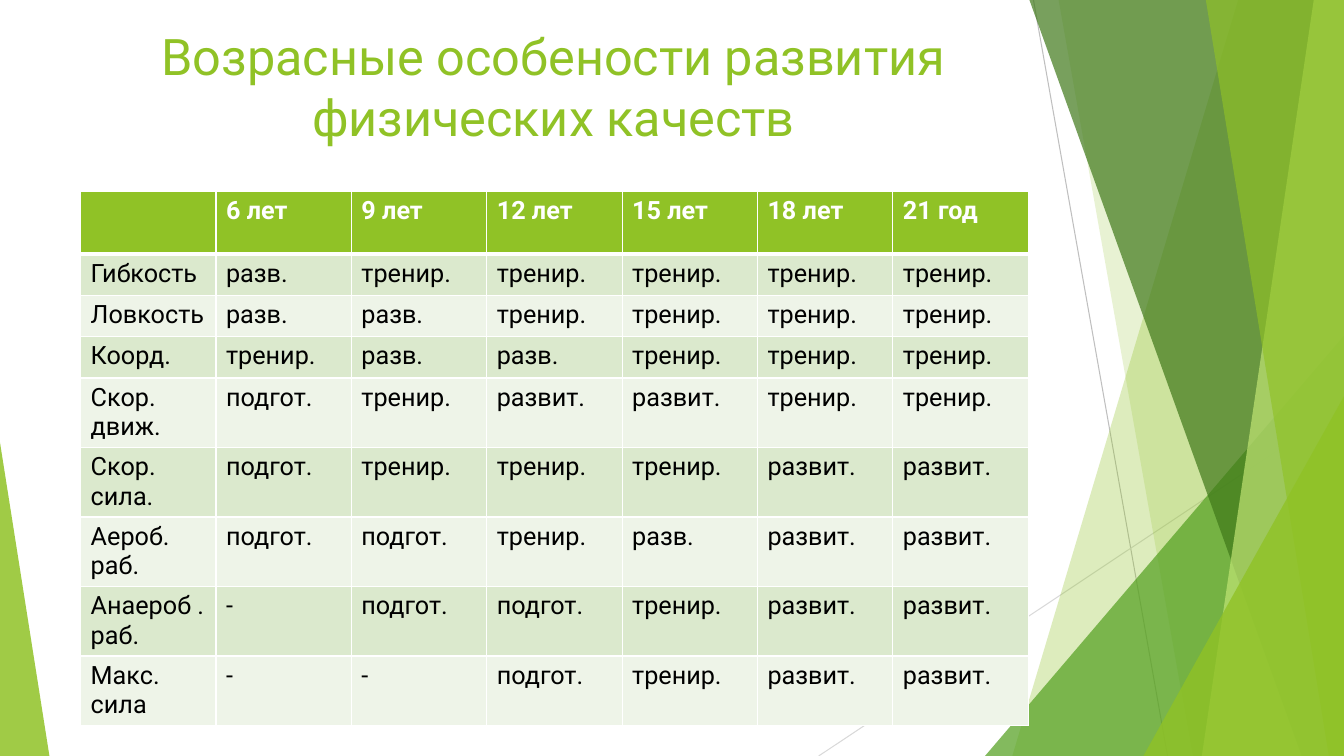
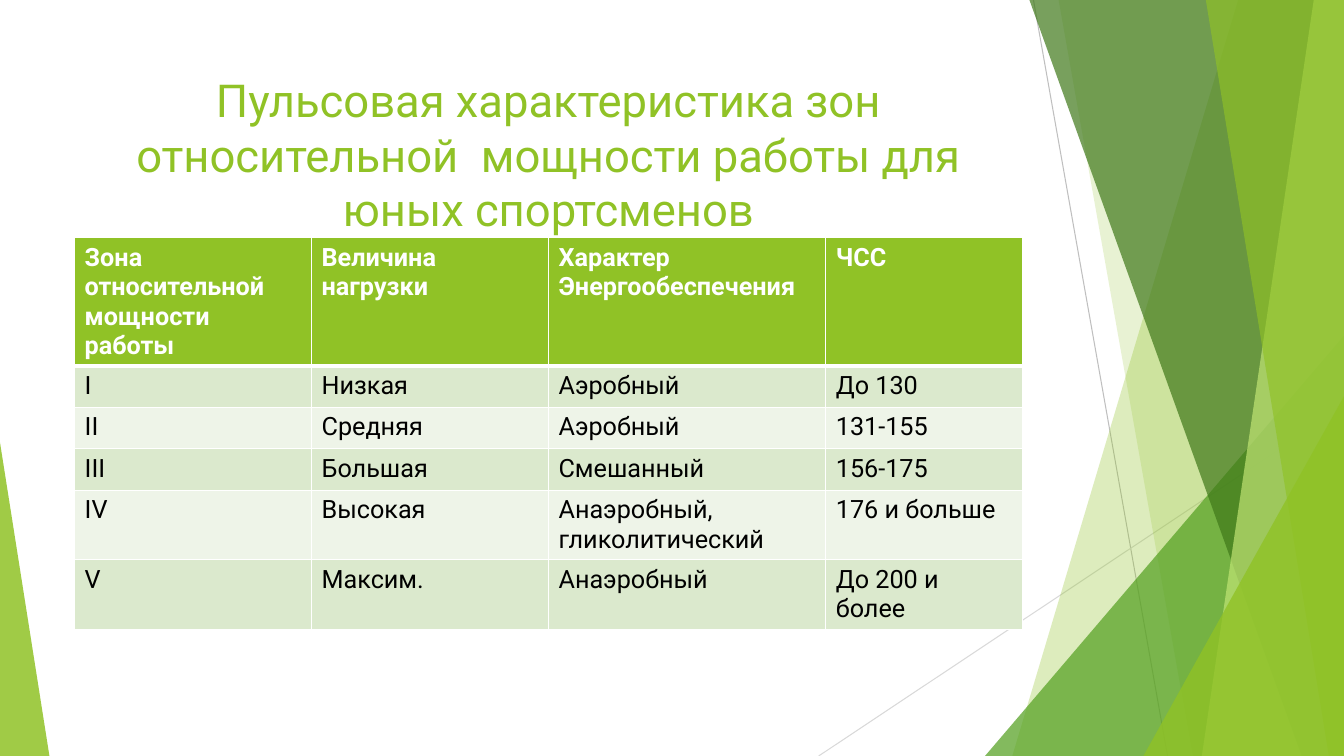
from dataclasses import dataclass

from lxml.etree import SubElement
from pptx import Presentation
from pptx.dml.color import RGBColor
from pptx.enum.shapes import MSO_CONNECTOR, MSO_SHAPE
from pptx.enum.text import MSO_ANCHOR, MSO_AUTO_SIZE, PP_ALIGN
from pptx.oxml.ns import qn
from pptx.util import Inches, Pt


@dataclass(frozen=True)
class Theme:
    """Colours, font, type sizes and page measures of the deck."""

    font: str = "Roboto"
    lime: str = "90C226"
    pale_lime: str = "C0E474"
    green: str = "54A021"
    forest: str = "3F7819"
    band_dark: str = "DBE9CD"
    band_light: str = "EEF4E8"
    white: str = "FFFFFF"
    black: str = "000000"
    ray_dark: str = "BFBFBF"
    ray_light: str = "D9D9D9"
    title_size: float = 36
    long_title_size: float = 32.4
    table_size: float = 18
    ray_width: float = 0.75
    border: float = 1
    header_border: float = 3
    width: float = 13.33
    height: float = 7.5
    content_width: float = 9.4
    title_height: float = 1.44


THEME = Theme()

AGE_ROWS = [
    ["", "6 лет", "9 лет", "12 лет", "15 лет", "18 лет", "21 год"],
    ["Гибкость", "разв."] + ["тренир."] * 5,
    ["Ловкость", "разв.", "разв."] + ["тренир."] * 4,
    ["Коорд.", "тренир.", "разв.", "разв."] + ["тренир."] * 3,
    ["Скор.\nдвиж.", "подгот.", "тренир.", "развит.", "развит.", "тренир.", "тренир."],
    ["Скор.\nсила.", "подгот.", "тренир.", "тренир.", "тренир.", "развит.", "развит."],
    ["Аероб.\nраб.", "подгот.", "подгот.", "тренир.", "разв.", "развит.", "развит."],
    ["Анаероб .\nраб.", "-", "подгот.", "подгот.", "тренир.", "развит.", "развит."],
    ["Макс.\nсила", "-", "-", "подгот.", "тренир.", "развит.", "развит."],
]

PULSE_ROWS = [
    ["Зона относительной мощности работы", "Величина нагрузки",
     "Характер Энергообеспечения", "ЧСС"],
    ["I", "Низкая", "Аэробный", "До 130"],
    ["II", "Средняя", "Аэробный", "131-155"],
    ["III", "Большая", "Смешанный", "156-175"],
    ["IV", "Высокая", "Анаэробный, гликолитический", "176 и больше"],
    ["V", "Максим.", "Анаэробный", "До 200 и более"],
]


def rgb(colour):
    """Turn a hex string into a colour."""
    return RGBColor.from_string(colour)


def style_font(font, size, colour, bold=False):
    """Apply the deck font with a size, colour and weight."""
    font.name = THEME.font
    font.size = Pt(size)
    font.bold = bold
    font.color.rgb = rgb(colour)


def paint(shape, colour, opacity):
    """Give a shape a translucent fill without outline or shadow."""
    shape.shadow.inherit = False
    shape.line.fill.background()
    shape.fill.solid()
    shape.fill.fore_color.rgb = rgb(colour)
    tint = shape._element.spPr.find(qn("a:solidFill")).find(qn("a:srgbClr"))
    SubElement(tint, qn("a:alpha"), val=str(opacity * 1000))


def add_ray(slide, start, end, colour):
    """Draw a thin straight line."""
    ray = slide.shapes.add_connector(
        MSO_CONNECTOR.STRAIGHT, *(Inches(value) for value in (*start, *end)))
    ray.line.color.rgb = rgb(colour)
    ray.line.width = Pt(THEME.ray_width)
    SubElement(ray._element.spPr, qn("a:effectLst"))


def add_facet(slide, top_x, bottom_x, colour, opacity):
    """Draw a full-height facet from a slanted left edge to the right page edge."""
    corners = [(Inches(x), Inches(y)) for x, y in (
        (top_x, 0), (THEME.width, 0), (THEME.width, THEME.height), (bottom_x, THEME.height))]
    builder = slide.shapes.build_freeform(*corners[0])
    builder.add_line_segments(corners[1:], close=True)
    paint(builder.convert_to_shape(), colour, opacity)


def add_corner(slide, left, right, top, apex, colour, opacity):
    """Draw a triangle standing on the bottom page edge."""
    corner = slide.shapes.add_shape(
        MSO_SHAPE.ISOSCELES_TRIANGLE, Inches(left), Inches(top),
        Inches(right - left), Inches(THEME.height - top))
    corner.adjustments[0] = apex
    paint(corner, colour, opacity)


def decorate_layout(slide):
    """Draw the faceted backdrop and hand it to the layout all slides share."""
    own_count = len(slide.shapes)
    add_ray(slide, (10.25, 0), (11.58, THEME.height), THEME.ray_dark)
    add_ray(slide, (THEME.width, 4.03), (8.12, THEME.height), THEME.ray_light)
    add_facet(slide, 12.28, 10.04, THEME.lime, 30)
    add_facet(slide, 10.5, 11.83, THEME.lime, 20)
    add_corner(slide, 9.77, THEME.width, 3.33, 1, THEME.green, 72)
    add_facet(slide, 10.21, 12.91, THEME.forest, 70)
    add_facet(slide, 13.03, 11.92, THEME.pale_lime, 70)
    add_facet(slide, 11.96, 13.18, THEME.lime, 65)
    add_corner(slide, 11.34, THEME.width, 3.93, 1, THEME.lime, 80)
    add_corner(slide, 0, 0.49, 4.39, 0, THEME.lime, 85)
    backdrop = slide.slide_layout.shapes._spTree
    for number, part in enumerate(list(slide.shapes)[own_count:], start=100):
        part._element.xpath(".//p:cNvPr")[0].set("id", str(number))
        backdrop.append(part._element)


def set_title(slide, text, left, top, size):
    """Place and format the title placeholder."""
    title = slide.shapes.title
    title.left, title.top = Inches(left), Inches(top)
    title.width, title.height = Inches(THEME.content_width), Inches(THEME.title_height)
    frame = title.text_frame
    frame.word_wrap = True
    frame.auto_size = MSO_AUTO_SIZE.NONE
    frame.vertical_anchor = MSO_ANCHOR.TOP
    paragraph = frame.paragraphs[0]
    paragraph.alignment = PP_ALIGN.CENTER
    run = paragraph.add_run()
    run.text = text
    style_font(run.font, size, THEME.lime)


def set_borders(cell, top, bottom):
    """Draw white borders around a cell."""
    properties = cell._tc.get_or_add_tcPr()
    widths = {"lnL": THEME.border, "lnR": THEME.border, "lnT": top, "lnB": bottom}
    for side, width in widths.items():
        edge = SubElement(properties, qn(f"a:{side}"), w=str(Pt(width)))
        SubElement(SubElement(edge, qn("a:solidFill")), qn("a:srgbClr"), val=THEME.white)


def fill_cell(cell, text, row_index):
    """Write one cell in the style of its row."""
    is_header = row_index == 0
    set_borders(cell,
                THEME.header_border if row_index == 1 else THEME.border,
                THEME.header_border if is_header else THEME.border)
    band = THEME.band_dark if row_index % 2 else THEME.band_light
    cell.fill.solid()
    cell.fill.fore_color.rgb = rgb(THEME.lime if is_header else band)
    if not text:
        return
    for index, line in enumerate(text.split("\n")):
        frame = cell.text_frame
        paragraph = frame.add_paragraph() if index else frame.paragraphs[0]
        run = paragraph.add_run()
        run.text = line
        style_font(run.font, THEME.table_size,
                   THEME.white if is_header else THEME.black, is_header)


def add_grid(slide, rows, left, top, widths, heights):
    """Add a banded table with a header row."""
    table = slide.shapes.add_table(
        len(rows), len(widths), Inches(left), Inches(top),
        Inches(sum(widths)), Inches(sum(heights))).table
    for column, width in zip(table.columns, widths):
        column.width = Inches(width)
    for row_index, (row, height, texts) in enumerate(zip(table.rows, heights, rows)):
        row.height = Inches(height)
        for cell, text in zip(row.cells, texts):
            fill_cell(cell, text, row_index)


def main():
    """Build and save the deck."""
    deck = Presentation()
    deck.slide_width, deck.slide_height = Inches(THEME.width), Inches(THEME.height)
    title_only = deck.slide_layouts[5]

    ages = deck.slides.add_slide(title_only)
    decorate_layout(ages)
    set_title(ages, "Возрасные особености развития физических качеств",
              0.79, 0.2, THEME.title_size)
    age_columns = len(AGE_ROWS[0])
    add_grid(ages, AGE_ROWS, 0.8, 1.9, [THEME.content_width / age_columns] * age_columns,
             [0.62] + [0.41] * 3 + [0.69] * 5)

    pulse = deck.slides.add_slide(title_only)
    set_title(pulse, "Пульсовая характеристика зон относительной  мощности работы для юных спортсменов",
              0.74, 0.67, THEME.long_title_size)
    add_grid(pulse, PULSE_ROWS, 0.74, 2.36, [2.35, 2.35, 2.75, 1.95],
             [1.27] + [0.41] * 3 + [0.69] * 2)

    deck.save("out.pptx")


if __name__ == "__main__":
    main()
